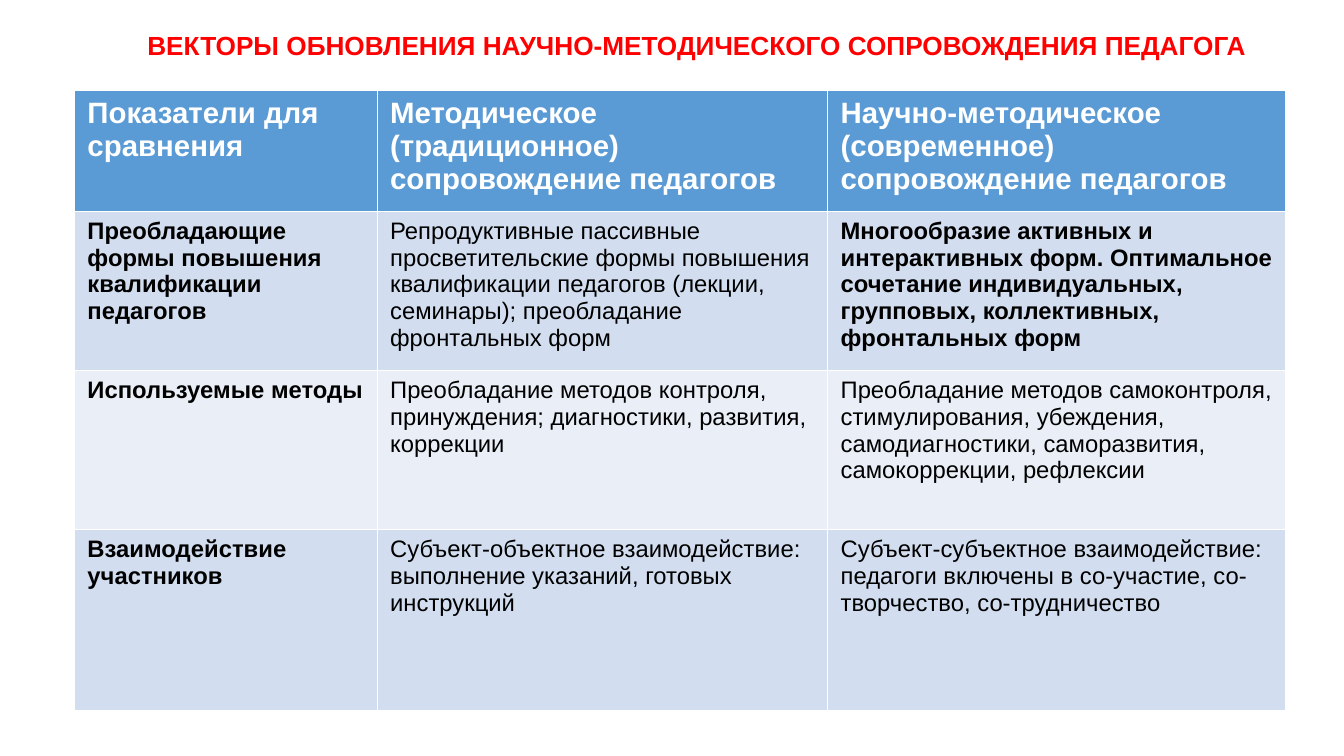
from dataclasses import dataclass
from lxml.etree import SubElement
from pptx import Presentation
from pptx.dml.color import RGBColor
from pptx.enum.text import PP_ALIGN
from pptx.oxml.ns import qn
from pptx.util import Pt


@dataclass(frozen=True)
class Theme:
    """Colours, font and type sizes of the slide."""
    font: str = "Arial"
    title: str = "FF0000"
    head: str = "5B9BD5"
    light: str = "FFFFFF"
    dark: str = "000000"
    bands: tuple = ("D2DEEF", "EAEFF7")
    title_size: float = 18.7
    head_size: float = 21
    body_size: float = 17


class Deck:
    """Holds the theme and the current slide."""

    def __init__(self, theme):
        """Open a blank slide."""
        self.theme = theme
        self.show = Presentation()
        self.show.slide_width, self.show.slide_height = Pt(960), Pt(540)
        self.slide = self.show.slides.add_slide(self.show.slide_layouts[6])

    def text(self, frame, words, size, color, bold):
        """Fill a text frame with one styled paragraph."""
        frame.word_wrap = True
        para = frame.paragraphs[0]
        para.text = words
        font = para.font
        font.name, font.size, font.bold = self.theme.font, Pt(size), bold
        font.color.rgb = RGBColor.from_string(color)
        return para

    def title(self, words, left, top, width, height):
        """Add the centred heading."""
        box = self.slide.shapes.add_textbox(Pt(left), Pt(top), Pt(width), Pt(height))
        look = self.theme
        para = self.text(box.text_frame, words, look.title_size, look.title, True)
        para.alignment = PP_ALIGN.CENTER

    def edge(self, cell):
        """Draw thin lines on all sides of a cell."""
        props = cell._tc.get_or_add_tcPr()
        for side in ("lnL", "lnR", "lnT", "lnB"):
            line = SubElement(props, qn(f"a:{side}"), w=str(Pt(1)))
            fill = SubElement(line, qn("a:solidFill"))
            SubElement(fill, qn("a:srgbClr"), val=self.theme.light)

    def cell(self, cell, words, size, color, bold, fill):
        """Style one table cell."""
        cell.margin_left = cell.margin_right = Pt(9.2)
        cell.margin_top = cell.margin_bottom = Pt(4.7)
        self.edge(cell)
        cell.fill.solid()
        cell.fill.fore_color.rgb = RGBColor.from_string(fill)
        self.text(cell.text_frame, words, size, color, bold)

    def table(self, rows, left, top, widths, heights, strong):
        """Add a table with a header row, banded body and bold cells."""
        look = self.theme
        grid = self.slide.shapes.add_table(
            len(rows), len(widths), Pt(left), Pt(top),
            Pt(sum(widths)), Pt(sum(heights))).table
        for col, width in zip(grid.columns, widths):
            col.width = Pt(width)
        for r, (row, height) in enumerate(zip(rows, heights)):
            grid.rows[r].height = Pt(height)
            for c, words in enumerate(row):
                if r == 0:
                    style = look.head_size, look.light, True, look.head
                else:
                    bold = c == 0 or (r, c) in strong
                    style = look.body_size, look.dark, bold, look.bands[(r - 1) % 2]
                self.cell(grid.cell(r, c), words, *style)


ROWS = [
    ("Показатели для сравнения",
     "Методическое (традиционное) сопровождение педагогов",
     "Научно-методическое (современное) сопровождение педагогов"),
    ("Преобладающие формы повышения квалификации педагогов",
     "Репродуктивные пассивные просветительские формы повышения квалификации "
     "педагогов (лекции, семинары); преобладание фронтальных форм",
     "Многообразие активных и интерактивных форм. Оптимальное сочетание "
     "индивидуальных, групповых, коллективных, фронтальных форм"),
    ("Используемые методы",
     "Преобладание методов контроля, принуждения; диагностики, развития, коррекции",
     "Преобладание методов самоконтроля, стимулирования, убеждения, "
     "самодиагностики, саморазвития, самокоррекции, рефлексии"),
    ("Взаимодействие участников",
     "Субъект-объектное взаимодействие: выполнение указаний, готовых инструкций",
     "Субъект-субъектное взаимодействие: педагоги включены в со-участие, "
     "со-творчество, со-трудничество"),
]


def main():
    """Build and save the slide."""
    deck = Deck(Theme())
    deck.title("ВЕКТОРЫ ОБНОВЛЕНИЯ НАУЧНО-МЕТОДИЧЕСКОГО СОПРОВОЖДЕНИЯ ПЕДАГОГА",
               47, 17.3, 901.4, 30)
    deck.table(ROWS, 53.3, 64.8, (216.2, 321.8, 327), (86.2, 113.6, 113.6, 129.2),
               strong={(1, 2)})
    deck.show.save("out.pptx")


if __name__ == "__main__":
    main()
